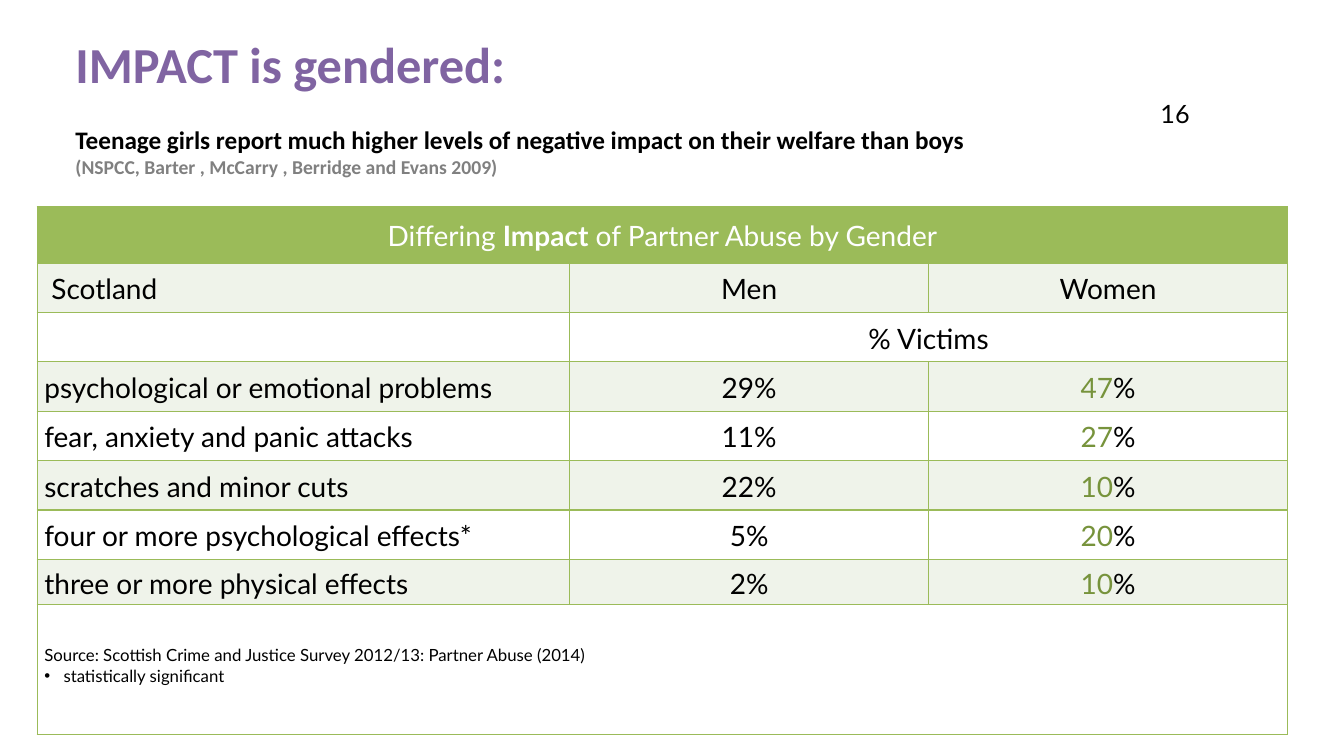
"""Build a slide on the gendered impact of partner abuse, with a survey table."""
from lxml.etree import SubElement
from pptx import Presentation
from pptx.dml.color import RGBColor
from pptx.enum.text import MSO_ANCHOR, PP_ALIGN
from pptx.oxml import parse_xml
from pptx.oxml.ns import nsdecls, qn
from pptx.util import Inches, Pt

PURPLE = RGBColor(0x80, 0x64, 0xA2)
GREEN = RGBColor(0x9B, 0xBB, 0x59)
DARK_GREEN = RGBColor(0x77, 0x93, 0x3C)
PALE_GREEN = RGBColor(0xEF, 0xF3, 0xEA)
GREY = RGBColor(0x80, 0x80, 0x80)
BLACK = RGBColor(0, 0, 0)
WHITE = RGBColor(0xFF, 0xFF, 0xFF)

COLUMNS = [5.28, 3.56, 3.56]
ROWS = [0.56] + [0.49] * 6 + [0.45, 1.29]
MERGES = [(0, 0, 2), (2, 1, 2), (8, 0, 2)]
EFFECTS = [
    ("psychological or emotional problems", "29", "47"),
    ("fear, anxiety and panic attacks", "11", "27"),
    ("scratches and minor cuts", "22", "10"),
    ("four or more psychological effects*", "5", "20"),
    ("three or more physical effects", "2", "10"),
]


def add_span(para, text, **formats):
    """Append a run and apply its font values."""
    span = para.add_run()
    span.text = text
    span.font.color.rgb = formats.pop("color", BLACK)
    for name, value in formats.items():
        setattr(span.font, name, value)


def add_box(page, left, top, width, height):
    """Add a wrapping text box and return its text frame."""
    frame = page.shapes.add_textbox(*map(Inches, (left, top, width, height))).text_frame
    frame.word_wrap = True
    return frame


deck = Presentation()
deck.slide_width, deck.slide_height = Inches(13.33), Inches(7.5)
page = deck.slides.add_slide(deck.slide_layouts[6])

heading = add_box(page, 0.65, 0.28, 11.16, 1.55)
add_span(heading.paragraphs[0], "IMPACT is gendered:", name="Calibri", size=Pt(36), bold=True, color=PURPLE)
para = heading.add_paragraph()
para.space_before = Pt(22)
add_span(para, "Teenage girls report much higher levels of negative impact on their welfare than boys",
         name="Calibri", size=Pt(18), bold=True)
para.add_line_break()
add_span(para, "(NSPCC, Barter , McCarry , Berridge and Evans 2009)",
         name="Calibri", size=Pt(14), bold=True, color=GREY)

table = page.shapes.add_table(len(ROWS), len(COLUMNS), Inches(0.37), Inches(2.05),
                              Inches(sum(COLUMNS)), Inches(sum(ROWS))).table
table.first_row = table.horz_banding = False
for column, width in zip(table.columns, COLUMNS):
    column.width = Inches(width)
for row, height in zip(table.rows, ROWS):
    row.height = Inches(height)
for row, first, last in MERGES:
    table.cell(row, first).merge(table.cell(row, last))

body = {"name": "Lato", "size": Pt(20)}
white = {"color": WHITE}
victims = {"color": DARK_GREEN}
contents = {
    (0, 0): [("Differing ", white), ("Impact", {"bold": True, **white}),
             (" of Partner Abuse by Gender", white)],
    (1, 0): [("Scotland", {})],
    (1, 1): [("Men", {})],
    (1, 2): [("Women", {})],
    (2, 1): [("% Victims", {})],
    (8, 0): [("Source: Scottish Crime and Justice Survey 2012/13: Partner Abuse (2014)", {"size": Pt(12)})],
}
for row, (effect, men, women) in enumerate(EFFECTS, start=3):
    contents[row, 0] = [(effect, {})]
    contents[row, 1] = [(men + "%", {})]
    contents[row, 2] = [(women, victims), ("%", {})]

for row in range(len(ROWS)):
    for column in range(len(COLUMNS)):
        cell = table.cell(row, column)
        cell.fill.solid()
        cell.fill.fore_color.rgb = GREEN if row == 0 else PALE_GREEN if row % 2 else WHITE
        if row == len(ROWS) - 1:
            cell.fill.fore_color.rgb = WHITE
        layout = {"margin_left": Inches(0.07), "margin_right": Inches(0.07), "margin_top": 0,
                  "margin_bottom": 0, "vertical_anchor": MSO_ANCHOR.MIDDLE}
        for name, value in layout.items():
            setattr(cell, name, value)
        for place, side in enumerate(("lnL", "lnR", "lnT", "lnB")):
            cell._tc.get_or_add_tcPr().insert(place, parse_xml(
                f'<a:{side} {nsdecls("a")} w="12700"><a:solidFill>'
                f'<a:srgbClr val="{GREEN}"/></a:solidFill></a:{side}>'))
        para = cell.text_frame.paragraphs[0]
        para.line_spacing = 1.07
        para.alignment = PP_ALIGN.CENTER if column or row == 0 else PP_ALIGN.LEFT
        for text, formats in contents.get((row, column), []):
            add_span(para, text, **{**body, **formats})

table.cell(1, 0).margin_left = Inches(0.14)
source = table.cell(8, 0)
source.margin_bottom = Inches(0.1)
para = source.text_frame.add_paragraph()
para.line_spacing = 1.07
properties = para._p.get_or_add_pPr()
properties.set("marL", str(Inches(0.19)))
properties.set("indent", str(-Inches(0.19)))
SubElement(properties, qn("a:buFont")).set("typeface", "Arial")
SubElement(properties, qn("a:buChar")).set("char", "•")
add_span(para, "statistically significant", name="Lato", size=Pt(12))

number = add_box(page, 9.41, 0.93, 3, 0.4)
number.margin_left = Inches(2.1)
add_span(number.paragraphs[0], "16", name="Lato", size=Pt(18))

deck.save("out.pptx")
